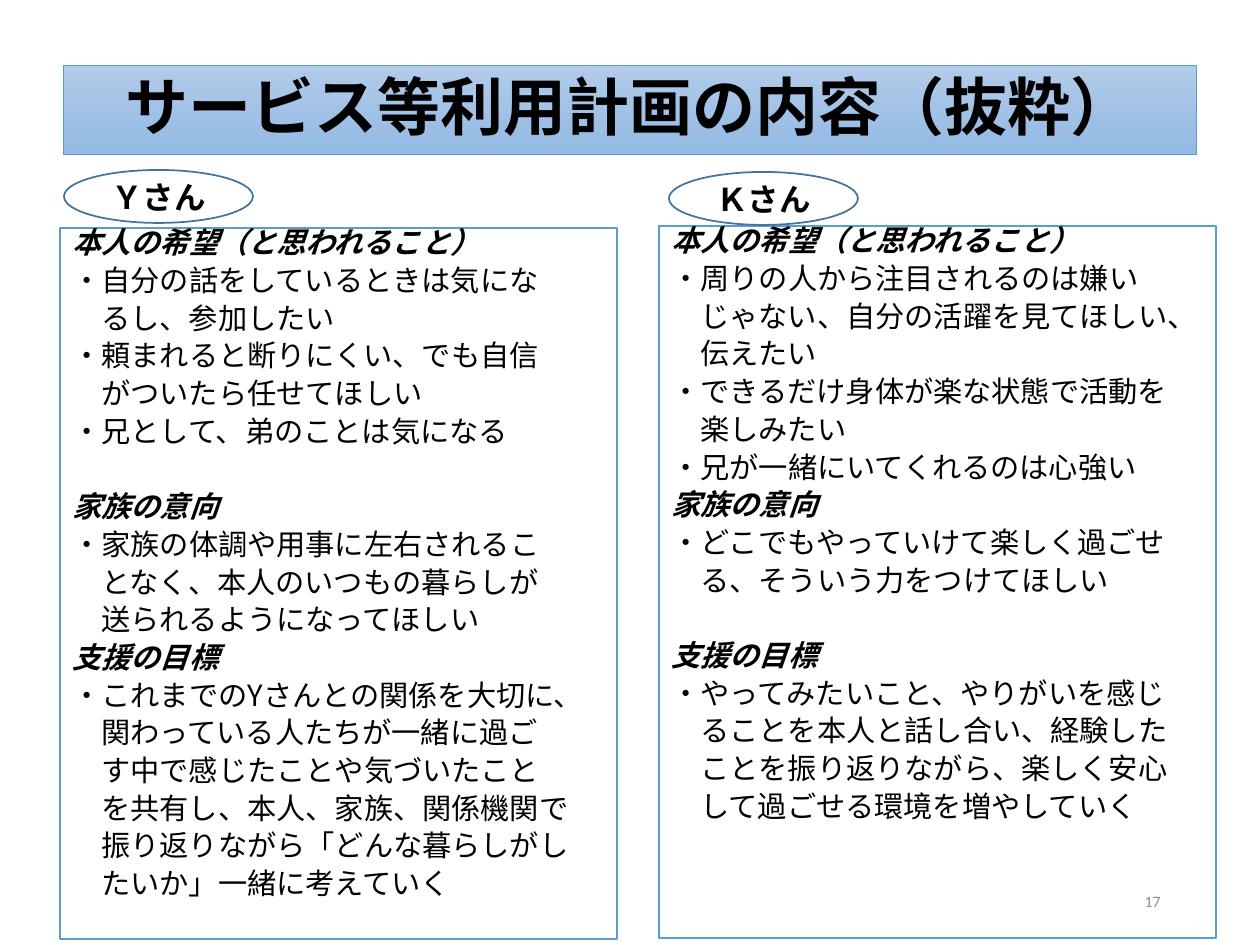
"""Build the slide that sets excerpts of two service plans side by side."""
from dataclasses import dataclass
from typing import Any

from lxml.etree import SubElement
from pptx import Presentation
from pptx.dml.color import RGBColor
from pptx.enum.shapes import MSO_SHAPE
from pptx.enum.text import MSO_ANCHOR, PP_ALIGN
from pptx.oxml.ns import qn
from pptx.util import Emu, Pt

EMU_PER_PX = 914400 / 126
BLACK = RGBColor(0x00, 0x00, 0x00)
GREY = RGBColor(0x8C, 0x8C, 0x8C)
BLUE = RGBColor(0x5B, 0x9B, 0xD5)
DARK_BLUE = RGBColor(0x43, 0x73, 0x9E)
BANNER_TOP = RGBColor(0xB1, 0xCB, 0xE9)
BANNER_BOTTOM = RGBColor(0x93, 0xB9, 0xE4)
JAPANESE = "Noto Sans CJK JP"

PLAN_LINE = {"line_spacing": 0.7, "alignment": PP_ALIGN.LEFT}
CENTRED = {"alignment": PP_ALIGN.CENTER}
PLAN_SIZE = 16.7
LINE_GAP = 7.5
SECTION_GAP = 29
HANGING_INDENT = 29


@dataclass(frozen=True)
class Box:
    left: int
    top: int
    width: int
    height: int


@dataclass(frozen=True)
class Section:
    heading: str
    items: tuple[str, ...]
    gap: float = LINE_GAP


@dataclass(frozen=True)
class Plan:
    person: str
    badge: Box
    frame: Box
    sections: tuple[Section, ...]


PLANS = (
    Plan("Ｙさん", Box(64, 170, 189, 53), Box(60, 228, 557, 711), (
        Section("本人の希望（と思われること）", (
            "・自分の話をしているときは気にな\nるし、参加したい",
            "・頼まれると断りにくい、でも自信\nがついたら任せてほしい",
            "・兄として、弟のことは気になる",
        )),
        Section("家族の意向", (
            "・家族の体調や用事に左右されるこ\nとなく、本人のいつもの暮らしが\n送られるようになってほしい",
        ), SECTION_GAP),
        Section("支援の目標", (
            "・これまでのYさんとの関係を大切に、\n関わっている人たちが一緒に過ご\n"
            "す中で感じたことや気づいたこと\nを共有し、本人、家族、関係機関で\n"
            "振り返りながら「どんな暮らしがし\nたいか」一緒に考えていく",
        )),
    )),
    Plan("Ｋさん", Box(669, 172, 189, 53), Box(659, 226, 557, 712), (
        Section("本人の希望（と思われること）", (
            "・周りの人から注目されるのは嫌い\nじゃない、自分の活躍を見てほしい、\n伝えたい",
            "・できるだけ身体が楽な状態で活動を\n楽しみたい",
            "・兄が一緒にいてくれるのは心強い",
        )),
        Section("家族の意向", (
            "・どこでもやっていけて楽しく過ごせ\nる、そういう力をつけてほしい",
        )),
        Section("支援の目標", (
            "・やってみたいこと、やりがいを感じ\nることを本人と話し合い、経験した\n"
            "ことを振り返りながら、楽しく安心\nして過ごせる環境を増やしていく",
        ), SECTION_GAP),
    )),
)


def px(length: int) -> Emu:
    """Turn px into EMU."""
    return Emu(round(length * EMU_PER_PX))


def place(box: Box) -> tuple[Emu, ...]:
    """Give the left, top, width and height of a box in EMU."""
    return tuple(px(n) for n in (box.left, box.top, box.width, box.height))


def apply(target: Any, values: dict[str, Any]) -> None:
    """Set each format value on the target."""
    for name, value in values.items():
        setattr(target, name, value)


def write(paragraph: Any, text: str, size: float, layout: dict[str, Any],
          bold: bool = False, italic: bool = False,
          typeface: str = JAPANESE, colour: RGBColor = BLACK) -> None:
    """Write one formatted run into a paragraph."""
    apply(paragraph, layout)
    run = paragraph.add_run()
    run.text = text
    apply(run.font, {"size": Pt(size), "bold": bold, "italic": italic, "name": typeface})
    run.font.color.rgb = colour
    SubElement(run.font._element, qn("a:ea"), typeface=typeface)


def add_outline(slide: Any, kind: MSO_SHAPE, box: Box, colour: RGBColor,
                weight: float, anchor: MSO_ANCHOR) -> Any:
    """Add an unfilled, shadowless outlined shape."""
    outline = slide.shapes.add_shape(kind, *place(box))
    outline.shadow.inherit = False
    outline.fill.background()
    outline.line.color.rgb = colour
    outline.line.width = Pt(weight)
    apply(outline.text_frame, {"word_wrap": True, "vertical_anchor": anchor})
    return outline


def add_banner(slide: Any, title: str) -> None:
    """Add the title on its gradient band."""
    banner = add_outline(slide, MSO_SHAPE.RECTANGLE, Box(63, 66, 1134, 89),
                         BLUE, 0.5, MSO_ANCHOR.MIDDLE)
    banner.fill.gradient()
    banner.fill.gradient_angle = 270
    for stop, colour, position in zip(banner.fill.gradient_stops,
                                      (BANNER_TOP, BANNER_BOTTOM), (0, 1)):
        stop.color.rgb = colour
        stop.position = position
    write(banner.text_frame.paragraphs[0], title, 36,
          CENTRED | {"line_spacing": 0.9}, bold=True)


def add_plan(slide: Any, plan: Plan) -> None:
    """Add the framed sections of one person's plan."""
    frame = add_outline(slide, MSO_SHAPE.RECTANGLE, plan.frame, BLUE, 0.7,
                        MSO_ANCHOR.TOP).text_frame
    for number, section in enumerate(plan.sections):
        heading = frame.add_paragraph() if number else frame.paragraphs[0]
        gap = section.gap if number else 0
        write(heading, section.heading, PLAN_SIZE, PLAN_LINE | {"space_before": Pt(gap)},
              bold=True, italic=True)
        for item in section.items:
            for row, text in enumerate(item.split("\n")):
                line = frame.add_paragraph()
                if row:
                    line._p.get_or_add_pPr().set("marL", str(px(HANGING_INDENT)))
                write(line, text, PLAN_SIZE, PLAN_LINE | {"space_before": Pt(LINE_GAP)})


def add_badge(slide: Any, plan: Plan) -> None:
    """Add the oval that names the person."""
    badge = add_outline(slide, MSO_SHAPE.OVAL, plan.badge, DARK_BLUE, 1, MSO_ANCHOR.MIDDLE)
    write(badge.text_frame.paragraphs[0], plan.person, 18, CENTRED, bold=True)


def add_page_number(slide: Any, number: str) -> None:
    """Add the page number at the lower right."""
    page = slide.shapes.add_textbox(*place(Box(889, 876, 284, 50))).text_frame
    apply(page, {"word_wrap": True, "vertical_anchor": MSO_ANCHOR.MIDDLE})
    write(page.paragraphs[0], number, 9, {"alignment": PP_ALIGN.RIGHT},
          typeface="Calibri", colour=GREY)


def main() -> None:
    """Build and save the slide."""
    deck = Presentation()
    apply(deck, {"slide_width": px(1260), "slide_height": px(945)})
    slide = deck.slides.add_slide(deck.slide_layouts[6])
    for plan in PLANS:
        add_plan(slide, plan)
    add_page_number(slide, "17")
    add_banner(slide, "サービス等利用計画の内容（抜粋）")
    for plan in PLANS:
        add_badge(slide, plan)
    deck.save("out.pptx")


if __name__ == "__main__":
    main()
